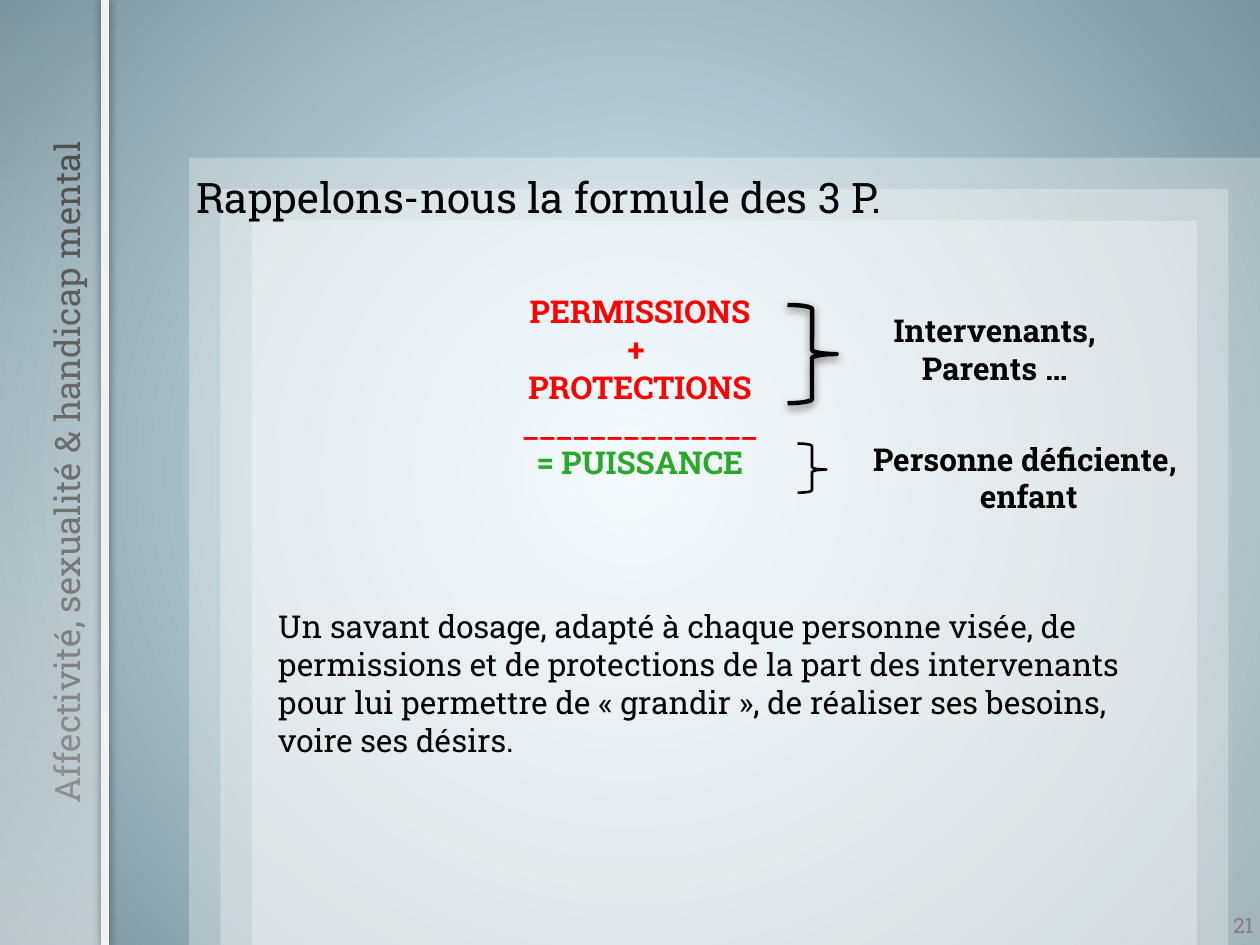
from dataclasses import dataclass

from lxml.etree import SubElement
from pptx import Presentation
from pptx.dml.color import RGBColor
from pptx.enum.shapes import MSO_CONNECTOR as Connector, MSO_SHAPE as Preset
from pptx.enum.text import MSO_ANCHOR as Anchor, MSO_AUTO_SIZE as AutoSize, PP_ALIGN as Align
from pptx.oxml.ns import qn
from pptx.util import Inches, Pt


@dataclass(frozen=True)
class Theme:
    font: str = "Roboto Slab"
    black: str = "000000"
    white: str = "FFFFFF"
    rule: str = "F1F1F1"
    title: str = "404040"
    number: str = "808080"
    red: str = "FF0000"
    green: str = "2AA82A"
    glow: str = "E1F6FF"
    edge: str = "7B939C"
    heading_size: int = 24
    title_size: int = 20
    body_size: int = 18
    number_size: int = 12


THEME = Theme()


def rgb(value):
    return RGBColor.from_string(value)


def add_xml(parent, tag, **attributes):
    return SubElement(parent, qn(tag), {key: str(value) for key, value in attributes.items()})


def add_color(parent, color, opacity=100):
    node = add_xml(parent, "a:srgbClr", val=color)
    if opacity < 100:
        add_xml(node, "a:alpha", val=opacity * 1000)


def set_gradient(fill, owner, stops, angle=None):
    """Linear gradient at the given angle, or a circular one from the centre."""
    fill.gradient()
    gradient = next(owner.iter(qn("a:gradFill")))
    for child in list(gradient):
        gradient.remove(child)
    stop_list = add_xml(gradient, "a:gsLst")
    for position, color, opacity in stops:
        add_color(add_xml(stop_list, "a:gs", pos=position * 1000), color, opacity)
    if angle is None:
        circle = add_xml(gradient, "a:path", path="circle")
        add_xml(circle, "a:fillToRect", l=50000, t=50000, r=50000, b=50000)
    else:
        add_xml(gradient, "a:lin", ang=angle * 60000, scaled=0)


def set_shadow(shape, opacity, blur, distance=0, direction=0):
    shape.shadow.inherit = False
    effects = shape.element.spPr.find(qn("a:effectLst"))
    outer = add_xml(effects, "a:outerShdw", blurRad=Pt(blur), dist=Pt(distance),
                    dir=direction * 60000, algn="ctr", rotWithShape=0)
    add_color(outer, THEME.black, opacity)


def add_panel(slide, box):
    panel = slide.shapes.add_shape(Preset.RECTANGLE, *map(Inches, box))
    panel.shadow.inherit = False
    panel.line.fill.background()
    return panel


def add_veil(slide, box, opacity):
    veil = add_panel(slide, box)
    veil.fill.solid()
    veil.fill.fore_color.rgb = rgb(THEME.white)
    color = next(veil.element.spPr.iter(qn("a:srgbClr")))
    add_xml(color, "a:alpha", val=opacity * 1000)


def add_brace(slide, box, width):
    brace = slide.shapes.add_shape(Preset.RIGHT_BRACE, *map(Inches, box))
    brace.shadow.inherit = False
    brace.fill.background()
    brace.line.color.rgb = rgb(THEME.black)
    brace.line.width = Pt(width)
    return brace


def write_text(shape, lines, size=THEME.body_size, color=THEME.black, bold=False,
               align=Align.LEFT, anchor=Anchor.TOP, auto_size=AutoSize.SHAPE_TO_FIT_TEXT,
               inset=None):
    """Write one paragraph a line; a line may be a (text, color) pair."""
    frame = shape.text_frame
    frame.word_wrap = True
    frame.auto_size = auto_size
    frame.vertical_anchor = anchor
    if inset is not None:
        frame.margin_left = frame.margin_right = Inches(inset)
        frame.margin_top = frame.margin_bottom = Inches(inset)
    for index, line in enumerate(lines):
        text, line_color = line if isinstance(line, tuple) else (line, color)
        paragraph = frame.add_paragraph() if index else frame.paragraphs[0]
        paragraph.alignment = align
        run = paragraph.add_run()
        run.text = text
        run.font.name = THEME.font
        run.font.size = Pt(size)
        run.font.bold = bold
        run.font.color.rgb = rgb(line_color)


def add_text(slide, box, lines, **style):
    write_text(slide.shapes.add_textbox(*map(Inches, box)), lines, **style)


def add_backdrop(slide):
    set_gradient(slide.background.fill, slide.element,
                 [(0, THEME.glow, 100), (100, THEME.edge, 100)])
    # Nested veils, each stepping in by a quarter inch
    for step in range(3):
        inset = 0.25 * step
        add_veil(slide, (1.5 + inset, 1.25 + inset, 8.5 - 2 * inset, 6.25 - inset), 30)
    # Side band and its rule
    band = add_panel(slide, (0, 0, 0.85, 7.5))
    set_gradient(band.fill, band.element.spPr,
                 [(0, THEME.white, 50), (100, THEME.white, 0)], angle=270)
    rule = slide.shapes.add_connector(Connector.STRAIGHT, Inches(0.83), 0,
                                      Inches(0.83), Inches(7.5))
    rule.line.color.rgb = rgb(THEME.rule)
    rule.line.width = Pt(4.5)
    add_xml(rule.element.spPr, "a:effectLst")
    set_shadow(rule, opacity=40, blur=5)


def add_side_title(slide, text):
    title = slide.shapes.title
    title.left, title.top, title.width, title.height = map(Inches, (-3.02, 3.4, 6.83, 0.7))
    title.rotation = 270
    write_text(title, [text], size=THEME.title_size, color=THEME.title, align=Align.CENTER,
               anchor=Anchor.BOTTOM, auto_size=AutoSize.NONE)


def main():
    presentation = Presentation()
    presentation.slide_width, presentation.slide_height = Inches(10), Inches(7.5)
    slide = presentation.slides.add_slide(presentation.slide_layouts[5])

    add_backdrop(slide)
    add_side_title(slide, "Affectivité, sexualité & handicap mental")
    add_text(slide, (9.6, 7.19, 0.4, 0.3), ["21"], size=THEME.number_size, color=THEME.number,
             align=Align.RIGHT, anchor=Anchor.MIDDLE, auto_size=AutoSize.NONE, inset=0.05)
    add_text(slide, (1.46, 1.31, 8.27, 0.5), ["Rappelons-nous la formule des 3 P."],
             size=THEME.heading_size)

    # The formula
    strong = {"bold": True, "align": Align.CENTER}
    add_text(slide, (3.91, 2.27, 2.34, 1.62),
             ["PERMISSIONS", "+ ", "PROTECTIONS", "______________",
              ("= PUISSANCE", THEME.green)], color=THEME.red, **strong)

    # Braces and who they concern
    adults_brace = add_brace(slide, (6.25, 2.42, 0.39, 0.78), width=2.5)
    set_shadow(adults_brace, opacity=50, blur=5, distance=2, direction=90)
    person_brace = add_brace(slide, (6.33, 3.52, 0.23, 0.39), width=1.5)
    person_brace.adjustments[1] = 0.53
    add_text(slide, (6.88, 2.42, 2.03, 0.71), ["Intervenants,", "Parents …"], **strong)
    add_text(slide, (6.72, 3.44, 2.89, 0.71), ["Personne déficiente, ", "enfant"], **strong)

    # Conclusion
    add_text(slide, (2.11, 4.77, 7.42, 1.31), [
        "Un savant dosage, adapté à chaque personne visée, de permissions et de protections "
        "de la part des intervenants pour lui permettre de « grandir », de réaliser "
        "ses besoins, voire ses désirs."])

    presentation.save("out.pptx")


if __name__ == "__main__":
    main()
